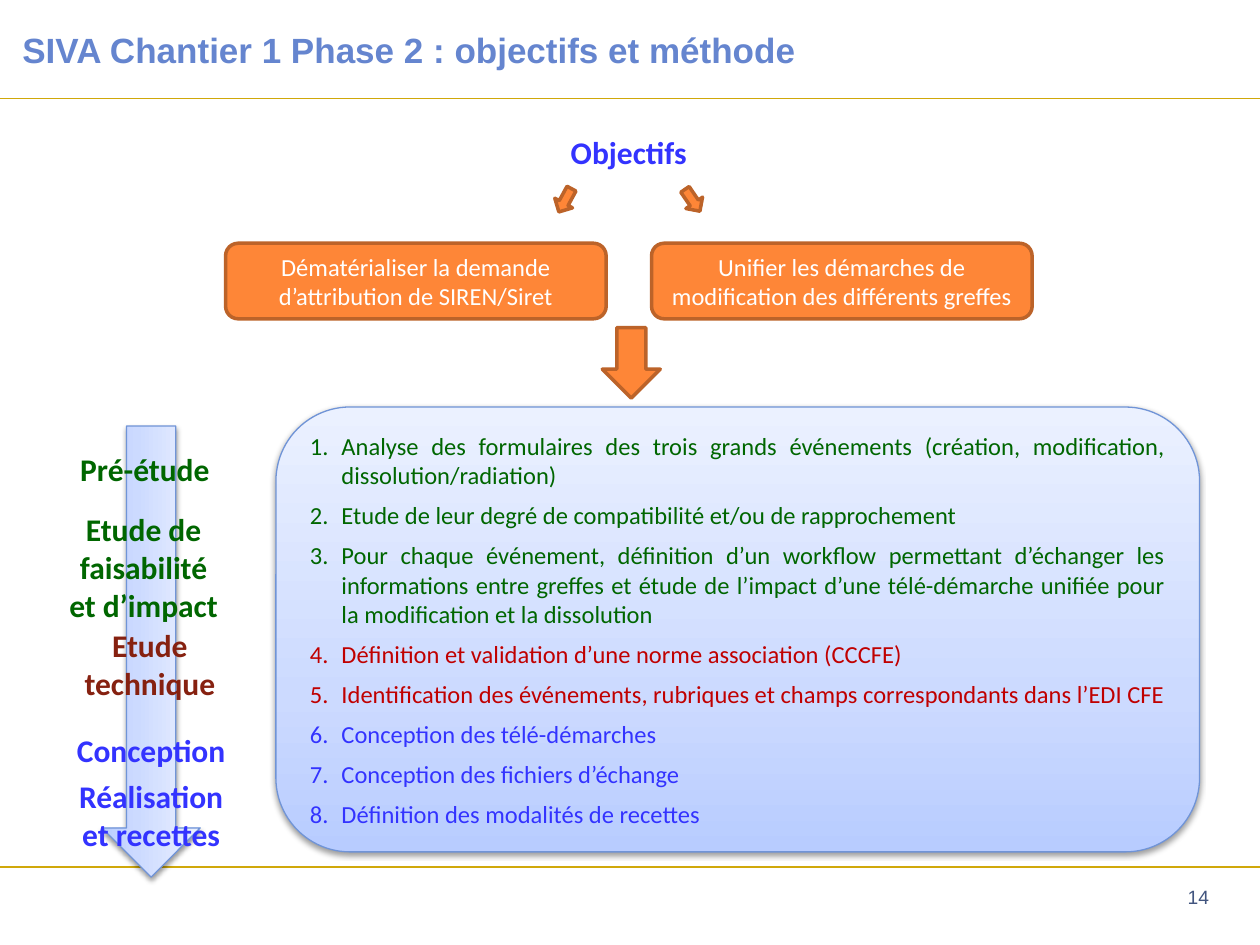
"""Build the slide on the objectives and method of phase 2."""
from dataclasses import dataclass

from pptx import Presentation
from pptx.dml.color import RGBColor as Color
from pptx.enum.shapes import MSO_CONNECTOR as Connector, MSO_SHAPE as Shape
from pptx.enum.text import MSO_ANCHOR as Anchor, PP_ALIGN as Align
from pptx.oxml import parse_xml
from pptx.oxml.ns import nsdecls
from pptx.util import Pt


@dataclass(frozen=True)
class Theme:
    title: str = "6585CF"
    number: str = "42557F"
    rule: str = "D0A80A"
    orange: str = "FE8637"
    orange_edge: str = "BC6329"
    blue_edge: str = "7094D7"
    white: str = "FFFFFF"
    green: str = "006600"
    red: str = "C00000"
    brown: str = "862110"
    blue: str = "3333FF"
    gradient: tuple = ((0, "B8CCFF"), (35, "CCDAFF"), (100, "EBF1FF"))
    title_size: float = 20
    label_size: float = 18
    body_size: float = 14
    number_size: float = 11
    heading_font: str = "Arial"
    body_font: str = "Calibri"


def write(frame, text, *, size, color, font, bold=False, align=Align.CENTER,
          numbered=False, first=True):
    para = frame.paragraphs[0] if first else frame.add_paragraph()
    para.alignment = align
    span = para.add_run()
    span.text = text
    span.font.size, span.font.name, span.font.bold = Pt(size), font, bold
    span.font.color.rgb = Color.from_string(color)
    if numbered:
        para.space_after = Pt(6)
        settings = para._p.get_or_add_pPr()
        settings.set("marL", str(Pt(18)))
        settings.set("indent", str(Pt(-18)))
        settings.append(parse_xml(f'<a:buFont {nsdecls("a")} typeface="+mj-lt"/>'))
        settings.append(parse_xml(f'<a:buAutoNum {nsdecls("a")} type="arabicPeriod"/>'))


class SlideBuilder:
    def __init__(self, page, theme):
        self.page, self.theme = page, theme

    def rule(self, y):
        line = self.page.shapes.add_connector(Connector.STRAIGHT, Pt(0), Pt(y), Pt(720), Pt(y))
        line.line.color.rgb = Color.from_string(self.theme.rule)
        line.line.width = Pt(0.75)
        line._element.spPr.append(parse_xml(f'<a:effectLst {nsdecls("a")}/>'))

    def text(self, text, left, top, width, height, anchor=Anchor.TOP, inset=7.2, **style):
        box = self.page.shapes.add_textbox(Pt(left), Pt(top), Pt(width), Pt(height))
        frame = box.text_frame
        frame.word_wrap = True
        frame.vertical_anchor = anchor
        frame.margin_left = Pt(inset)
        write(frame, text, **style)

    def label(self, text, left, top, height, color):
        self.text(text, left, top, 100.8, height, size=self.theme.label_size,
                  color=color, font=self.theme.body_font, bold=True)

    def shape(self, kind, left, top, width, height, edge, weight, rotation=0):
        shape = self.page.shapes.add_shape(kind, Pt(left), Pt(top), Pt(width), Pt(height))
        shape.rotation = rotation
        shape.shadow.inherit = False
        shape.line.color.rgb = Color.from_string(edge)
        shape.line.width = Pt(weight)
        shape.text_frame.word_wrap = True
        shape.text_frame.vertical_anchor = Anchor.MIDDLE
        return shape

    def solid(self, kind, *place, rotation=0):
        shape = self.shape(kind, *place, self.theme.orange_edge, 2, rotation)
        shape.fill.solid()
        shape.fill.fore_color.rgb = Color.from_string(self.theme.orange)
        return shape

    def shaded(self, kind, *place, rotation=0):
        shape = self.shape(kind, *place, self.theme.blue_edge, 0.75, rotation)
        stops = "".join(f'<a:gs pos="{position * 1000}"><a:srgbClr val="{color}"/></a:gs>'
                        for position, color in self.theme.gradient)
        properties = shape._element.spPr
        properties.find("{*}prstGeom").addnext(parse_xml(
            f'<a:gradFill {nsdecls("a")} rotWithShape="1"><a:gsLst>{stops}</a:gsLst>'
            '<a:lin ang="16200000" scaled="0"/></a:gradFill>'))
        properties.find("{*}effectLst").append(parse_xml(
            f'<a:outerShdw {nsdecls("a")} blurRad="{Pt(3.1)}" dist="{Pt(1.6)}" '
            'dir="5400000" rotWithShape="0"><a:srgbClr val="000000">'
            '<a:alpha val="38000"/></a:srgbClr></a:outerShdw>'))
        return shape

    def goal(self, text, left):
        box = self.solid(Shape.ROUNDED_RECTANGLE, left, 139, 217.5, 43.2)
        write(box.text_frame, text, size=self.theme.body_size,
              color=self.theme.white, font=self.theme.body_font)

    def steps(self, items, *place):
        panel = self.shaded(Shape.ROUNDED_RECTANGLE, *place)
        for index, (text, color) in enumerate(items):
            write(panel.text_frame, text, size=self.theme.body_size, color=color,
                  font=self.theme.body_font, align=Align.JUSTIFY,
                  numbered=True, first=index == 0)


def main():
    theme = Theme()
    deck = Presentation()
    deck.slide_width, deck.slide_height = Pt(720), Pt(540)
    page = deck.slides.add_slide(deck.slide_layouts[6])
    builder = SlideBuilder(page, theme)

    for y in (56.2, 495.4):
        builder.rule(y)
    builder.shaded(Shape.RIGHT_ARROW, -42.6, 344.2, 257.8, 56.2, rotation=90)
    builder.text("SIVA Chantier 1 Phase 2 : objectifs et méthode", 0, 0, 720, 56.2,
                 anchor=Anchor.MIDDLE, inset=12.8, size=theme.title_size,
                 color=theme.title, font=theme.heading_font, bold=True, align=Align.LEFT)
    builder.text("14", 530, 498.2, 168, 28.8, anchor=Anchor.MIDDLE, size=theme.number_size,
                 color=theme.number, font=theme.heading_font, align=Align.RIGHT)

    builder.label("Objectifs", 308.9, 72.7, 28.8, theme.blue)
    for left, rotation in ((315.4, 118.5), (388.1, 55.6)):
        builder.solid(Shape.RIGHT_ARROW, left, 108.7, 15.1, 11.5, rotation=rotation)
    builder.goal("Dématérialiser la demande d’attribution de SIREN/Siret", 128.9)
    builder.goal("Unifier les démarches de modification des différents greffes", 372.3)
    builder.solid(Shape.RIGHT_ARROW, 340.6, 190.8, 40.3, 33.1, rotation=90)

    builder.steps((
        ("Analyse des formulaires des trois grands événements (création, modification, "
         "dissolution/radiation)", theme.green),
        ("Etude de leur degré de compatibilité et/ou de rapprochement", theme.green),
        ("Pour chaque événement, définition d’un workflow permettant d’échanger les "
         "informations entre greffes et étude de l’impact d’une télé-démarche unifiée "
         "pour la modification et la dissolution", theme.green),
        ("Définition et validation d’une norme association (CCCFE)", theme.red),
        ("Identification des événements, rubriques et champs correspondants dans l’EDI CFE",
         theme.red),
        ("Conception des télé-démarches", theme.blue),
        ("Conception des fichiers d’échange", theme.blue),
        ("Définition des modalités de recettes", theme.blue),
    ), 157.7, 232.6, 527.8, 254.2)

    for phase in (
        ("Pré-étude", 32.4, 253.4, 28.8, theme.green),
        ("Etude de faisabilité et d’impact", 31.7, 288, 72.7, theme.green),
        ("Etude technique", 35.3, 354.2, 51.1, theme.brown),
        ("Conception", 36, 414, 28.8, theme.blue),
        ("Réalisation et recettes", 36, 440.6, 51.1, theme.blue),
    ):
        builder.label(*phase)
    deck.save("out.pptx")


if __name__ == "__main__":
    main()
